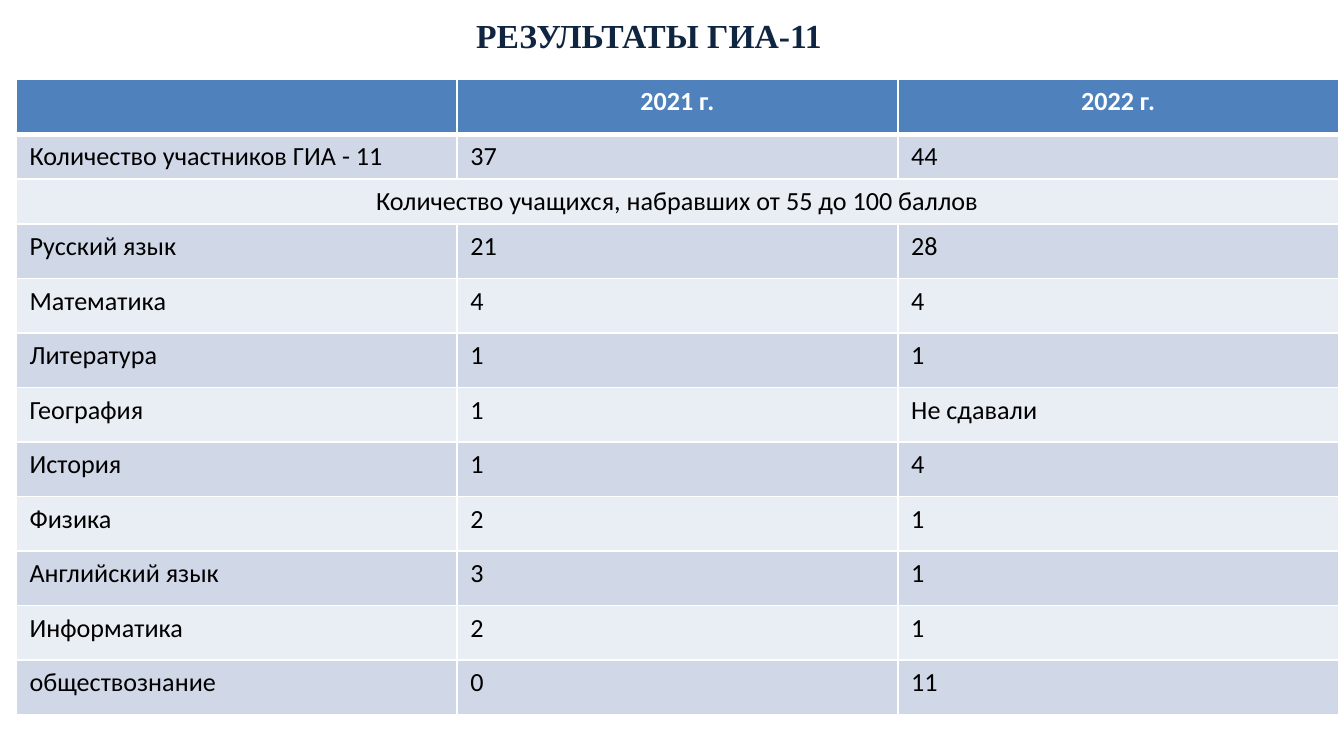
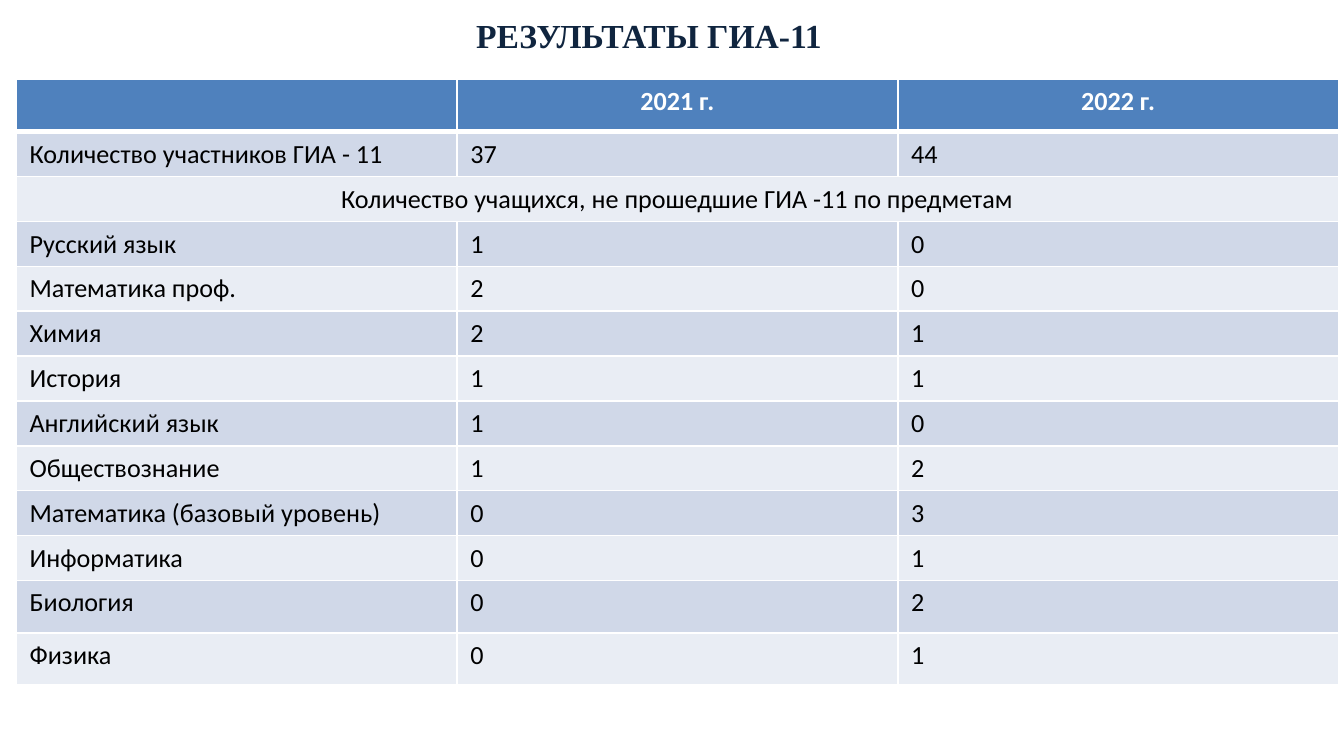
from lxml.etree import SubElement
from pptx import Presentation
from pptx.dml.color import RGBColor
from pptx.enum.text import MSO_AUTO_SIZE, PP_ALIGN
from pptx.oxml.ns import qn
from pptx.util import Inches, Pt

SLIDE_WIDTH = Inches(10)
SLIDE_HEIGHT = SLIDE_WIDTH * 9 // 16
TITLE = "РЕЗУЛЬТАТЫ ГИА-11"
TITLE_BOX = (3.43, 0.06, 2.8, 0.4)
TABLE_BOX = (0.12, 0.59, 9.84)
NAVY, BLUE, WHITE, BLACK = "10253F", "4F81BD", "FFFFFF", "000000"
BANDS = ("D0D8E8", "E9EDF4")
HEADER = ("", "2021 г.", "2022 г.")
PARTICIPANTS = ("Количество участников ГИА - 11", "37", "44")

HIGH_SCORES = [
    HEADER,
    PARTICIPANTS,
    ("Количество учащихся, набравших от 55 до 100 баллов",),
    ("Русский язык", "21", "28"),
    ("Математика", "4", "4"),
    ("Литература", "1", "1"),
    ("География", "1", "Не сдавали"),
    ("История", "1", "4"),
    ("Физика", "2", "1"),
    ("Английский язык", "3", "1"),
    ("Информатика", "2", "1"),
    ("обществознание", "0", "11"),
]
NOT_PASSED = [
    HEADER,
    PARTICIPANTS,
    ("Количество учащихся, не прошедшие ГИА -11 по предметам",),
    ("Русский язык", "1", "0"),
    ("Математика проф.", "2", "0"),
    ("Химия", "2", "1"),
    ("История", "1", "1"),
    ("Английский язык", "1", "0"),
    ("Обществознание", "1", "2"),
    ("Математика (базовый уровень)", "0", "3"),
    ("Информатика", "0", "1"),
    ("Биология", "0", "2"),
    ("Физика", "0", "1"),
]
HIGH_SCORES_HEIGHTS = [0.41, 0.33, 0.33] + [(4.72 - 0.41 - 2 * 0.33) / 9] * 9
NOT_PASSED_HEIGHTS = [0.39] + [0.33] * 10 + [0.39] * 2


def color(value):
    return RGBColor.from_string(value)


def write(para, text, size, font, tint, bold=False, align=PP_ALIGN.LEFT):
    para.alignment = align
    if not text:
        para._p.get_or_add_endParaRPr().set("sz", str(size * 100))
        return
    span = para.add_run()
    span.text = text
    span.font.size = Pt(size)
    span.font.name = font
    span.font.bold = bold
    span.font.color.rgb = color(tint)


def add_title(page, box):
    shape = page.shapes.add_textbox(*map(Inches, box))
    frame = shape.text_frame
    frame.word_wrap = False
    frame.auto_size = MSO_AUTO_SIZE.SHAPE_TO_FIT_TEXT
    write(frame.paragraphs[0], TITLE, 18, "Times New Roman", NAVY, True, PP_ALIGN.CENTER)


def set_borders(cell, top, bottom):
    """Draw white cell borders; widths in points, sides are always 1."""
    props = cell._tc.get_or_add_tcPr()
    for tag, width in (("a:lnL", 1), ("a:lnR", 1), ("a:lnT", top), ("a:lnB", bottom)):
        line = SubElement(props, qn(tag), w=str(Pt(width)))
        fill = SubElement(line, qn("a:solidFill"))
        SubElement(fill, qn("a:srgbClr"), val=WHITE)


def add_results_table(page, box, rows, heights):
    left, top, width = box
    columns = len(HEADER)
    table = page.shapes.add_table(
        len(rows), columns, Inches(left), Inches(top), Inches(width), Inches(sum(heights))
    ).table
    for column in table.columns:
        column.width = Inches(width / columns)
    for r, (texts, height) in enumerate(zip(rows, heights)):
        table.rows[r].height = Inches(height)
        is_header, is_caption = r == 0, len(texts) == 1
        if is_caption:
            table.cell(r, 0).merge(table.cell(r, columns - 1))
        for c in range(columns):
            cell = table.cell(r, c)
            set_borders(cell, 3 if r == 1 else 1, 3 if is_header else 1)
            cell.fill.solid()
            cell.fill.fore_color.rgb = color(BLUE if is_header else BANDS[(r - 1) % 2])
            write(
                cell.text_frame.paragraphs[0],
                texts[c] if c < len(texts) else "",
                14,
                "Calibri",
                WHITE if is_header else BLACK,
                is_header,
                PP_ALIGN.CENTER if is_header or is_caption else PP_ALIGN.LEFT,
            )


def add_results_slide(deck, rows, heights):
    page = deck.slides.add_slide(deck.slide_layouts[6])
    add_title(page, TITLE_BOX)
    add_results_table(page, TABLE_BOX, rows, heights)


def main():
    deck = Presentation()
    deck.slide_width, deck.slide_height = SLIDE_WIDTH, SLIDE_HEIGHT
    add_results_slide(deck, HIGH_SCORES, HIGH_SCORES_HEIGHTS)
    add_results_slide(deck, NOT_PASSED, NOT_PASSED_HEIGHTS)
    deck.save("out.pptx")


if __name__ == "__main__":
    main()
